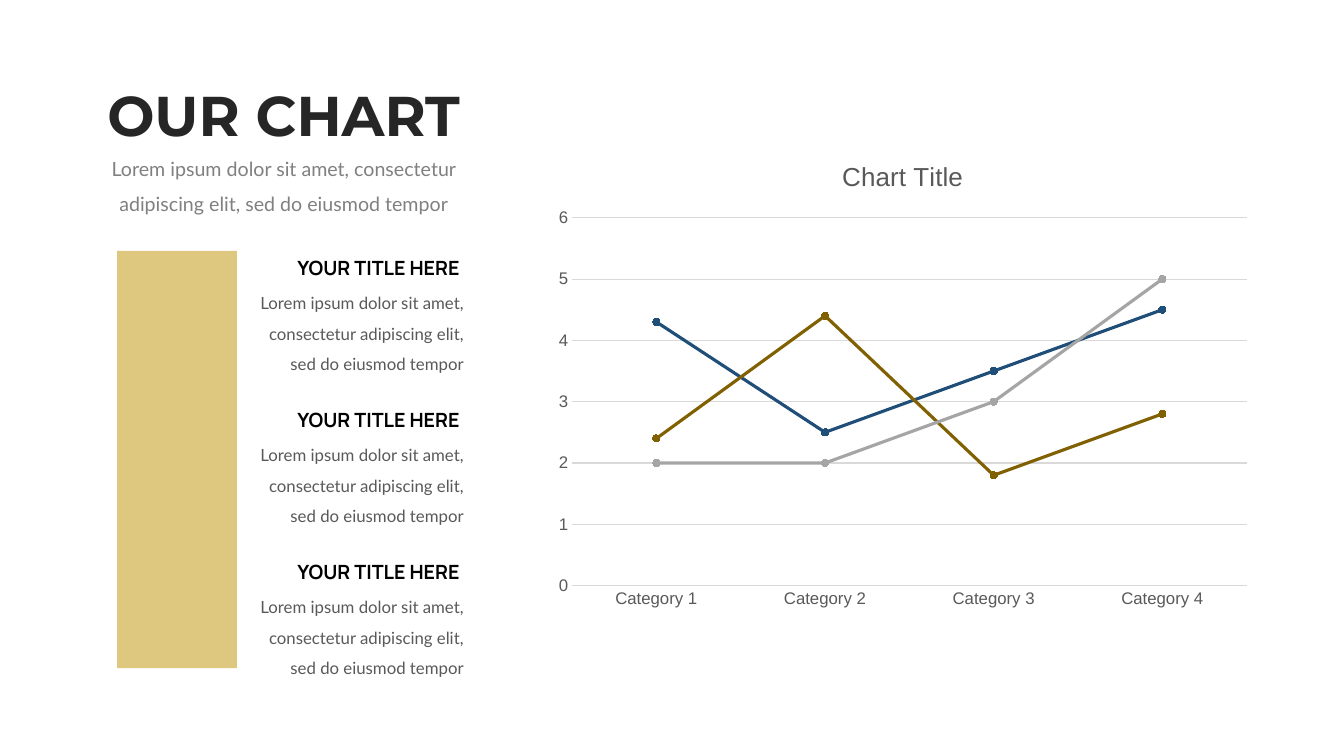
"""Build the OUR CHART slide: three titled notes beside a line chart."""
import pptx
import pptx.chart.data
import pptx.dml.color
import pptx.enum.chart
import pptx.enum.shapes
import pptx.enum.text
import pptx.oxml
import pptx.oxml.ns
import pptx.util
from lxml import etree

COLORS = {
    "gold": "BF9000",
    "heading": "262626",
    "subheading": "808080",
    "title": "000000",
    "body": "595959",
    "grid": "D9D9D9",
    "navy": "1F4E79",
    "brown": "806000",
    "gray": "A5A5A5",
}
LOREM = "Lorem ipsum dolor sit amet, consectetur adipiscing elit, sed do eiusmod tempor"
CATEGORIES = ["Category 1", "Category 2", "Category 3", "Category 4"]
SERIES = [
    ("Series 1", "navy", (4.3, 2.5, 3.5, 4.5)),
    ("Series 2", "brown", (2.4, 4.4, 1.8, 2.8)),
    ("Series 3", "gray", (2, 2, 3, 5)),
]
NOTE_COUNT = 3
NOTE_TOP = 6.32
NOTE_PITCH = 3.83


def rgb(color):
    return pptx.dml.color.RGBColor.from_string(COLORS[color])


def set_font(font, size, color, name="Arial", bold=False):
    font.name = name
    font.size = pptx.util.Pt(size)
    font.bold = bold
    font.color.rgb = rgb(color)


def write_text(frame, text, align="CENTER", spacing=None, **font):
    paragraph = frame.paragraphs[0]
    paragraph.alignment = getattr(pptx.enum.text.PP_ALIGN, align)
    paragraph.line_spacing = spacing
    run = paragraph.add_run()
    run.text = text
    set_font(run.font, **font)


class SlideBuilder:
    """Hold the current slide and its text styles."""

    STYLES = {
        "heading": dict(name="Montserrat", size=40, color="heading", bold=True),
        "subheading": dict(name="Lato", size=14, color="subheading", spacing=1.5),
        "title": dict(name="Manrope", size=14, color="title", bold=True, align="RIGHT"),
        "body": dict(name="Lato", size=12, color="body", spacing=1.5, align="RIGHT"),
    }

    def __init__(self, slide):
        self.slide = slide

    def box(self, *lengths):
        return [pptx.util.Cm(length) for length in lengths]

    def text(self, text, style, left, top, width, height, wrap=True):
        frame = self.slide.shapes.add_textbox(*self.box(left, top, width, height)).text_frame
        frame.word_wrap = wrap
        frame.auto_size = pptx.enum.text.MSO_AUTO_SIZE.SHAPE_TO_FIT_TEXT
        write_text(frame, text, **self.STYLES[style])

    def panel(self, color, opacity, left, top, width, height):
        panel = self.slide.shapes.add_shape(
            pptx.enum.shapes.MSO_SHAPE.RECTANGLE, *self.box(left, top, width, height))
        panel.shadow.inherit = False
        panel.line.fill.background()
        panel.fill.solid()
        panel.fill.fore_color.rgb = rgb(color)
        fill_color = panel.fill._xPr.find(".//" + pptx.oxml.ns.qn("a:srgbClr"))
        etree.SubElement(fill_color, pptx.oxml.ns.qn("a:alpha"), val=str(opacity * 1000))

    def line_chart(self, title, left, top, width, height):
        data = pptx.chart.data.CategoryChartData()
        data.categories = CATEGORIES
        for name, _, values in SERIES:
            data.add_series(name, values)
        chart = self.slide.shapes.add_chart(
            pptx.enum.chart.XL_CHART_TYPE.LINE_MARKERS,
            *self.box(left, top, width, height), data).chart
        set_font(chart.font, 10, "title")
        chart.has_legend = False
        chart.has_title = True
        write_text(chart.chart_title.text_frame, title, size=18.6, color="body")
        chart.chart_title.include_in_layout = False
        chart.plots[0].vary_by_categories = False
        self.style_axes(chart)
        for series, (_, color, _) in zip(chart.plots[0].series, SERIES):
            self.style_series(series, color)

    def style_axes(self, chart):
        for axis in (chart.category_axis, chart.value_axis):
            set_font(axis.tick_labels.font, 12, "body")
            axis.major_tick_mark = pptx.enum.chart.XL_TICK_MARK.NONE
            axis.minor_tick_mark = pptx.enum.chart.XL_TICK_MARK.NONE
        values = chart.value_axis
        values.minimum_scale, values.maximum_scale, values.major_unit = 0, 6, 1
        values.format.line.fill.background()
        for line in (chart.category_axis.format.line, values.major_gridlines.format.line):
            line.color.rgb = rgb("grid")
            line.width = pptx.util.Pt(0.75)

    def style_series(self, series, color):
        series.smooth = False
        series.format.line.color.rgb = rgb(color)
        series.format.line.width = pptx.util.Pt(2.25)
        marker = series.marker
        marker.style = pptx.enum.chart.XL_MARKER_STYLE.CIRCLE
        marker.size = 5
        marker.format.fill.solid()
        marker.format.fill.fore_color.rgb = rgb(color)
        marker.format.line.color.rgb = rgb(color)


def main():
    deck = pptx.Presentation()
    deck.slide_width = pptx.util.Cm(33.87)
    deck.slide_height = pptx.util.Cm(19.05)
    builder = SlideBuilder(deck.slides.add_slide(deck.slide_layouts[6]))

    builder.panel("gold", 50, 2.95, NOTE_TOP, 3.02, 10.52)
    builder.line_chart("Chart Title", 13.72, 3.51, 18.06, 12.04)
    builder.text("OUR CHART", "heading", -1.68, 1.9, 17.65, 1.96)
    builder.text(LOREM, "subheading", 1.68, 3.53, 10.95, 1.93)
    for index in range(NOTE_COUNT):
        top = NOTE_TOP + index * NOTE_PITCH
        builder.text("YOUR TITLE HERE", "title", 7.24, top, 4.6, 0.86, wrap=False)
        builder.text(LOREM, "body", 6.05, top + 0.69, 5.89, 2.46)
    deck.save("out.pptx")


if __name__ == "__main__":
    main()
